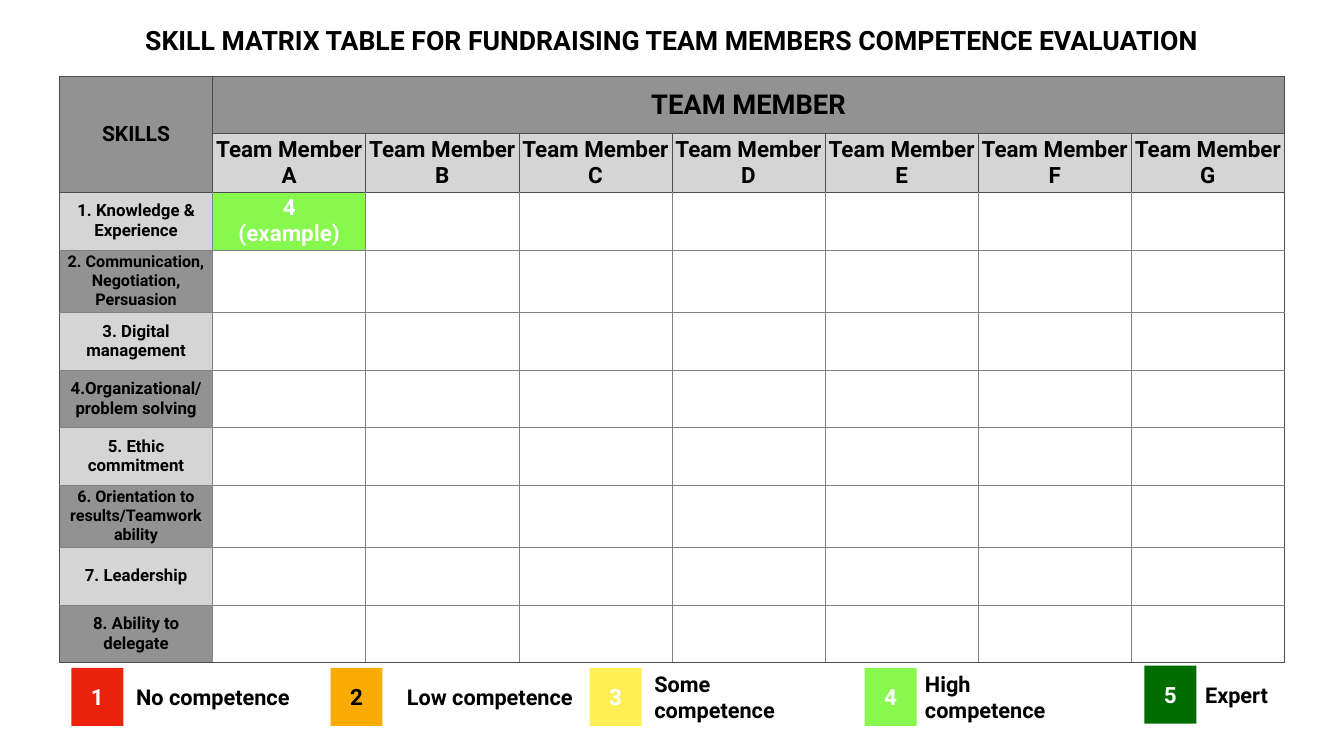
from dataclasses import dataclass

from lxml import etree
from pptx import Presentation
from pptx import util as u
from pptx.dml.color import RGBColor
from pptx.enum import shapes, text
from pptx.oxml.ns import qn


@dataclass(frozen=True)
class Theme:
    """Colours, type sizes and measures used on the slide."""
    font: str = "Roboto"
    black: str = "000000"
    white: str = "FFFFFF"
    dark_grey: str = "929292"
    light_grey: str = "D5D5D5"
    frame: str = "4D4D4D"
    label_line: str = "808080"
    grid_line: str = "838383"
    red: str = "ED220D"
    orange: str = "FBAB01"
    yellow: str = "FEEF56"
    green: str = "87F84D"
    dark_green: str = "016D01"
    title: int = 38
    team: int = 39
    member: int = 32
    corner: int = 30
    skill: int = 24
    long_skill: int = 23
    legend: int = 31
    inset: float = 0.14


THEME = Theme()
MEMBERS = "ABCDEFG"
SKILLS = [
    ("1. Knowledge & Experience", THEME.skill),
    ("2. Communication, Negotiation, Persuasion", THEME.long_skill),
    ("3. Digital management", THEME.skill),
    ("4.Organizational/ problem solving", THEME.skill),
    ("5. Ethic commitment", THEME.skill),
    ("6. Orientation to results/Teamwork ability", THEME.long_skill),
    ("7. Leadership", THEME.skill),
    ("8. Ability to delegate", THEME.skill),
]
LEVELS = [
    ("No competence", THEME.red, THEME.white, (3.6, 33.66, 11.96, 2.92), 3.12),
    ("Low competence", THEME.orange, THEME.black, (16.66, 33.66, 12.55, 2.92), 3.71),
    ("Some competence", THEME.yellow, THEME.white, (29.72, 33.66, 11.96, 2.92), 3.12),
    ("High competence", THEME.green, THEME.white, (43.58, 33.66, 11.74, 2.92), 2.9),
    ("Expert", THEME.dark_green, THEME.white, (57.68, 33.55, 6.81, 2.92), 2.92),
]


def write(frame, lines, size, color=THEME.black, align=text.PP_ALIGN.CENTER):
    """Write bold lines into a text frame, one paragraph each."""
    for index, line in enumerate(lines):
        paragraph = frame.add_paragraph() if index else frame.paragraphs[0]
        paragraph.alignment = align
        run = paragraph.add_run()
        run.text = line
        run.font.name = THEME.font
        run.font.size = u.Pt(size)
        run.font.bold = True
        run.font.color.rgb = RGBColor.from_string(color)


def set_margins(owner):
    """Give a cell or text frame the common inset on all sides."""
    owner.margin_left = owner.margin_right = u.Cm(THEME.inset)
    owner.margin_top = owner.margin_bottom = u.Cm(THEME.inset)
    owner.vertical_anchor = text.MSO_ANCHOR.MIDDLE


def set_borders(cell, colors):
    """Draw one-point cell borders in left, right, top, bottom order."""
    properties = cell._tc.get_or_add_tcPr()
    for side, color in zip("LRTB", colors):
        line = etree.SubElement(properties, qn(f"a:ln{side}"), w=str(u.Pt(1)))
        fill = etree.SubElement(line, qn("a:solidFill"))
        etree.SubElement(fill, qn("a:srgbClr"), val=color)


def fill_cell(cell, lines, size, fill, color=THEME.black):
    """Fill a cell and write its text."""
    set_margins(cell)
    cell.fill.solid()
    cell.fill.fore_color.rgb = RGBColor.from_string(fill)
    write(cell.text_frame, lines, size, color)


def add_label(slide, box, line, size, align):
    """Add a one-paragraph text box that grows with its text."""
    frame = slide.shapes.add_textbox(*map(u.Cm, box)).text_frame
    frame.word_wrap = True
    frame.auto_size = text.MSO_AUTO_SIZE.SHAPE_TO_FIT_TEXT
    set_margins(frame)
    write(frame, [line], size, align=align)


def add_matrix(slide, box):
    """Add the table of skills against team members."""
    rows, columns = len(SKILLS) + 2, len(MEMBERS) + 1
    table = slide.shapes.add_table(rows, columns, *map(u.Cm, box)).table
    table.first_row = table.horz_banding = False
    for column in table.columns:
        column.width = u.Cm(box[2] / columns)
    for row in table.rows:
        row.height = u.Cm(box[3] / rows)

    for r in range(rows):
        for c in range(columns):
            cell = table.cell(r, c)
            header = r < 2
            framed = (header or c == 0, header or c == columns - 1,
                      r <= 2, header or r == rows - 1)
            inner = THEME.grid_line if c else THEME.label_line
            set_borders(cell, [THEME.frame if edge else inner for edge in framed])
            cell.fill.background()

    table.cell(0, 0).merge(table.cell(1, 0))
    table.cell(0, 1).merge(table.cell(0, columns - 1))
    fill_cell(table.cell(0, 0), ["SKILLS"], THEME.corner, THEME.dark_grey)
    fill_cell(table.cell(0, 1), ["TEAM MEMBER"], THEME.team, THEME.dark_grey)
    for c, member in enumerate(MEMBERS, 1):
        fill_cell(table.cell(1, c), [f"Team Member {member}"],
                  THEME.member, THEME.light_grey)
    for r, (skill, size) in enumerate(SKILLS, 2):
        fill_cell(table.cell(r, 0), [skill], size,
                  THEME.dark_grey if r % 2 else THEME.light_grey)
    fill_cell(table.cell(2, 1), ["4", "(example)"], THEME.member,
              THEME.green, THEME.white)


def add_level(slide, box, number, name, fill, color, label_offset):
    """Add one legend entry: a numbered swatch and its name."""
    left, top, width, height = box
    swatch = slide.shapes.add_shape(
        shapes.MSO_SHAPE.RECTANGLE, *map(u.Cm, (left, top, 2.62, height)))
    swatch.shadow.inherit = False
    swatch.fill.solid()
    swatch.fill.fore_color.rgb = RGBColor.from_string(fill)
    swatch.line.fill.background()
    set_margins(swatch.text_frame)
    write(swatch.text_frame, [str(number)], THEME.member, color)
    add_label(slide, (left + label_offset, top + 0.66, width - label_offset, 1.63),
              name, THEME.legend, text.PP_ALIGN.LEFT)


def main():
    """Build and save the skill matrix slide."""
    presentation = Presentation()
    presentation.slide_width = u.Cm(67.74)
    presentation.slide_height = u.Cm(38.1)
    slide = presentation.slides.add_slide(presentation.slide_layouts[6])
    add_matrix(slide, (3, 3.84, 61.74, 29))
    for number, (name, fill, color, box, offset) in enumerate(LEVELS, 1):
        add_level(slide, box, number, name, fill, color, offset)
    add_label(slide, (2.7, 1.04, 62.33, 1.93),
              "SKILL MATRIX TABLE FOR FUNDRAISING TEAM MEMBERS COMPETENCE EVALUATION",
              THEME.title, text.PP_ALIGN.CENTER)
    presentation.save("out.pptx")


if __name__ == "__main__":
    main()
